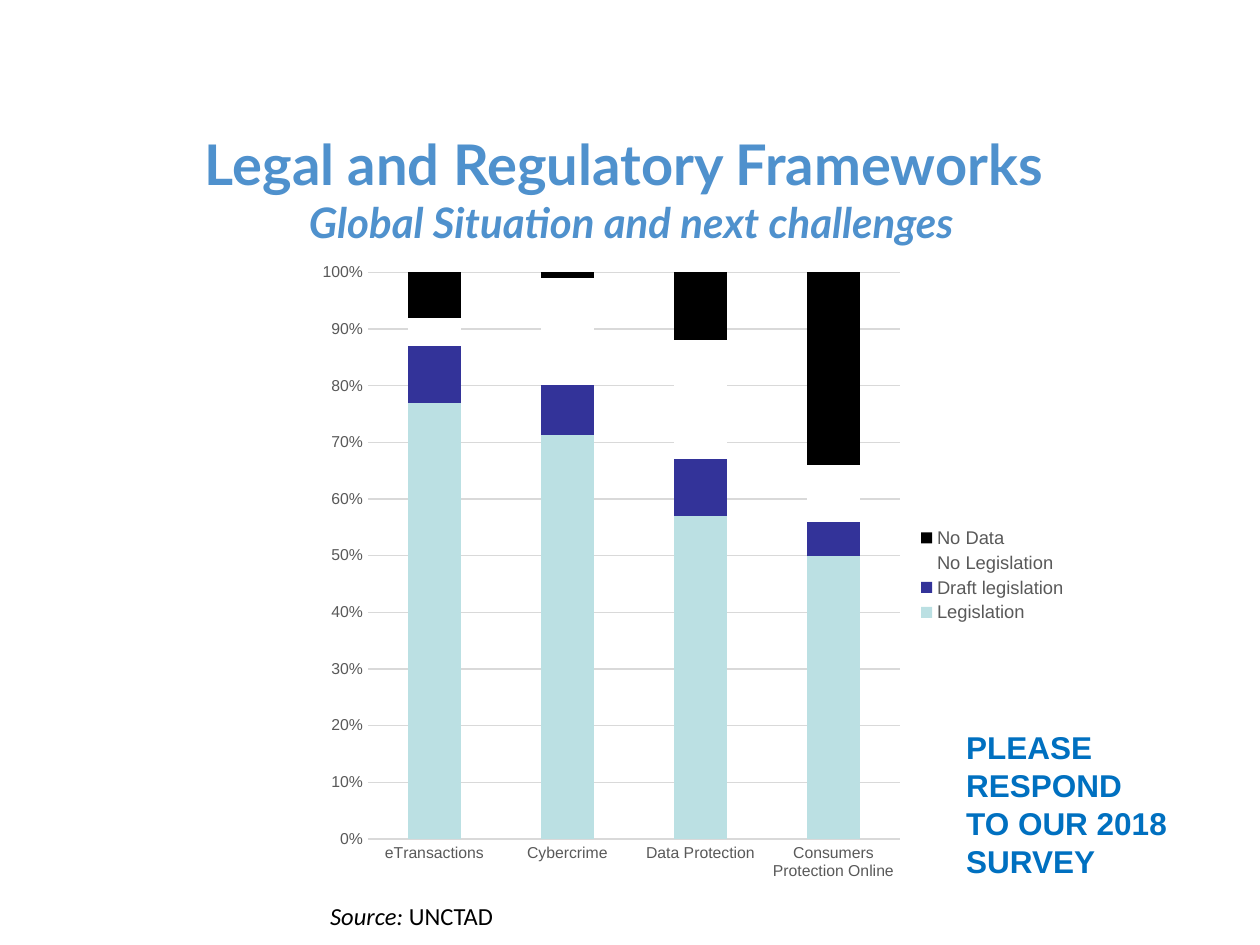
import dataclasses
import typing

import lxml.etree
import pptx
import pptx.chart.data
import pptx.dml.color
import pptx.enum.chart
import pptx.enum.text
import pptx.oxml.ns
import pptx.util

Inches = pptx.util.Inches
Enum = pptx.enum.chart


@dataclasses.dataclass(frozen=True)
class Theme:
    title: str = "4F91CD"
    call: str = "0070C0"
    ink: str = "000000"
    label: str = "595959"
    grid: str = "D9D9D9"
    head: str = "Lato"
    note: str = "Calibri"
    body: str = "Arial"
    title_size: float = 32
    sub_size: float = 24
    note_size: float = 14
    call_size: float = 18
    chart_size: float = 10
    axis_size: float = 9
    key_size: float = 10.5
    line: float = 0.75


class Box(typing.NamedTuple):
    left: float
    top: float
    width: float
    height: float


class Run(typing.NamedTuple):
    text: str
    form: dict


class Series(typing.NamedTuple):
    name: str
    values: tuple
    color: str


THEME = Theme()
CATS = ("eTransactions", "Cybercrime", "Data Protection", "Consumers Protection Online")
SERIES = (
    Series("Legislation", (77, 72, 57, 50), "BBE0E3"),
    Series("Draft legislation", (10, 9, 10, 6), "333399"),
    Series("No Legislation", (5, 19, 21, 10), "FFFFFF"),
    Series("No Data", (8, 1, 12, 34), "000000"),
)


def rgb(color: str) -> pptx.dml.color.RGBColor:
    return pptx.dml.color.RGBColor.from_string(color)


def set_font(font, color: str, **form) -> None:
    for name, value in form.items():
        setattr(font, name, pptx.util.Pt(value) if name == "size" else value)
    font.color.rgb = rgb(color)


def place(shape, box: Box) -> None:
    for name, value in box._asdict().items():
        setattr(shape, name, Inches(value))


def add_run(para, run: Run) -> None:
    part = para.add_run()
    part.text = run.text
    set_font(part.font, **run.form)


def set_frame(frame, **form) -> None:
    for name, value in form.items():
        setattr(frame, name, value)


def inset(x: float, y: float) -> dict:
    return dict(margin_left=Inches(x), margin_right=Inches(x),
                margin_top=Inches(y), margin_bottom=Inches(y))


def add_title(slide) -> None:
    title = slide.shapes.title
    place(title, Box(0.51, 0.99, 9, 1.01))
    set_frame(title.text_frame, word_wrap=True, **inset(0.07, 0.04),
              auto_size=pptx.enum.text.MSO_AUTO_SIZE.NONE,
              vertical_anchor=pptx.enum.text.MSO_ANCHOR.MIDDLE)
    para = title.text_frame.paragraphs[0]
    para.alignment = pptx.enum.text.PP_ALIGN.CENTER
    form = dict(color=THEME.title, name=THEME.head, bold=True)
    add_run(para, Run("Legal and Regulatory Frameworks ", {**form, "size": THEME.title_size}))
    para.add_line_break()
    add_run(para, Run("Global Situation and next challenges",
                      {**form, "size": THEME.sub_size, "italic": True}))


def add_text(slide, box: Box, runs: typing.Sequence[Run], **form) -> None:
    frame = slide.shapes.add_textbox(*map(Inches, box)).text_frame
    set_frame(frame, word_wrap=True,
              auto_size=pptx.enum.text.MSO_AUTO_SIZE.SHAPE_TO_FIT_TEXT, **form)
    for run in runs:
        add_run(frame.paragraphs[0], run)


def set_layout(parent, box: Box, after=None, inner: bool = False) -> None:
    """Fix the place of a chart part, in shares of the chart's size."""
    qn = pptx.oxml.ns.qn
    for old in parent.findall(qn("c:layout")):
        parent.remove(old)
    layout = lxml.etree.Element(qn("c:layout"))
    manual = lxml.etree.SubElement(layout, qn("c:manualLayout"))
    values = {"layoutTarget": "inner"} if inner else {}
    values.update(xMode="edge", yMode="edge")
    values.update(zip("xywh", map(str, box)))
    for name, value in values.items():
        lxml.etree.SubElement(manual, qn(f"c:{name}")).set("val", value)
    if after is None:
        parent.insert(0, layout)
    else:
        after.addnext(layout)


def set_axis(axis) -> None:
    axis.major_tick_mark = axis.minor_tick_mark = Enum.XL_TICK_MARK.NONE
    set_font(axis.tick_labels.font, THEME.label, name=THEME.body, size=THEME.axis_size)


def set_line(line) -> None:
    line.color.rgb = rgb(THEME.grid)
    line.width = pptx.util.Pt(THEME.line)


def add_chart(slide, box: Box) -> None:
    data = pptx.chart.data.CategoryChartData()
    data.categories = CATS
    for item in SERIES:
        data.add_series(item.name, item.values)
    chart = slide.shapes.add_chart(
        Enum.XL_CHART_TYPE.COLUMN_STACKED_100, *map(Inches, box), data).chart
    chart.has_title = False
    set_font(chart.font, THEME.ink, name=THEME.body, size=THEME.chart_size)

    plot = chart.plots[0]
    set_frame(plot, gap_width=150, overlap=100, vary_by_categories=False)
    for series, item in zip(plot.series, SERIES):
        series.format.fill.solid()
        series.format.fill.fore_color.rgb = rgb(item.color)

    cat, val = chart.category_axis, chart.value_axis
    for axis in (cat, val):
        set_axis(axis)
    set_line(cat.format.line)
    val.format.line.fill.background()
    val.has_major_gridlines = True
    set_line(val.major_gridlines.format.line)
    set_frame(val, minimum_scale=0, maximum_scale=1, major_unit=0.1)
    set_frame(val.tick_labels, number_format="0%", number_format_is_linked=False)

    chart.has_legend = True
    key = chart.legend
    set_frame(key, position=Enum.XL_LEGEND_POSITION.RIGHT, include_in_layout=False)
    set_font(key.font, THEME.label, name=THEME.body, size=THEME.key_size)
    side = key._element.find(pptx.oxml.ns.qn("c:legendPos"))
    set_layout(key._element, Box(0.79, 0.42, 0.2, 0.16), after=side)
    area = chart._chartSpace.find(".//" + pptx.oxml.ns.qn("c:plotArea"))
    set_layout(area, Box(0.08, 0.03, 0.69, 0.88), inner=True)


def main() -> None:
    deck = pptx.Presentation()
    deck.slide_width, deck.slide_height = Inches(10), Inches(7.5)
    slide = deck.slides.add_slide(deck.slide_layouts[5])
    add_title(slide)
    add_chart(slide, Box(2.43, 2.01, 6.12, 5.11))
    note = dict(color=THEME.ink, name=THEME.note, size=THEME.note_size)
    add_text(slide, Box(2.55, 7.11, 1.72, 0.31),
             [Run("Source: ", {**note, "italic": True}), Run("UNCTAD", note)],
             **inset(0.07, 0.04))
    call = dict(color=THEME.call, name=THEME.body, size=THEME.call_size, bold=True)
    add_text(slide, Box(7.57, 5.73, 1.84, 1.31),
             [Run("PLEASE RESPOND TO OUR 2018 SURVEY", call)])
    deck.save("out.pptx")


if __name__ == "__main__":
    main()
